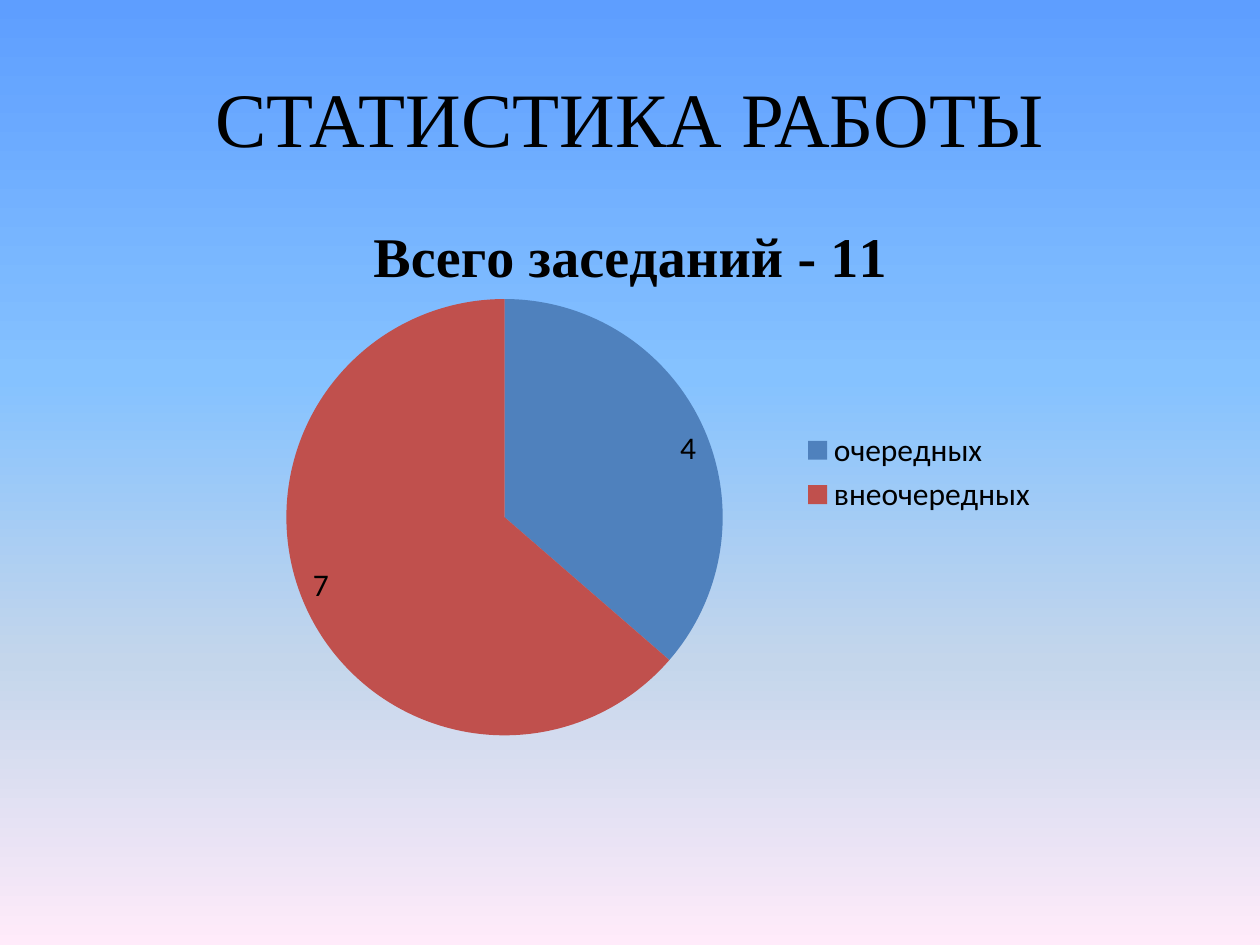
from pptx import Presentation, oxml
from pptx import util as u
from pptx.chart.data import CategoryChartData
from pptx.dml.color import RGBColor
from pptx.enum import chart as c, text as t
from pptx.oxml import ns

SERIF = "Times New Roman"
SANS = "Calibri"
BLACK = "000000"


def color(value):
    """Turn a hex string into a colour."""
    return RGBColor.from_string(value)


def style_font(font, name, size, bold=False):
    """Set typeface, size, weight and black colour."""
    font.name = name
    font.size = u.Pt(size)
    font.bold = bold
    font.color.rgb = color(BLACK)


def set_gradient_background(slide, stops):
    """Fill the background from top to bottom with (percent, hex) stops."""
    fill = slide.background.fill
    fill.gradient()
    fill.gradient_angle = 270
    stop_list = slide.background.element.xpath(".//a:gsLst")[0]
    for stop in list(stop_list):
        stop_list.remove(stop)
    for percent, value in stops:
        stop_list.append(oxml.parse_xml(
            f'<a:gs {ns.nsdecls("a")} pos="{percent * 1000}">'
            f'<a:srgbClr val="{value}"/></a:gs>'))


def add_heading(slide, wording):
    """Add the centred slide heading."""
    shape = slide.shapes.add_textbox(
        u.Inches(0.5), u.Inches(0.3), u.Inches(9), u.Inches(1.25))
    frame = shape.text_frame
    frame.word_wrap = True
    frame.vertical_anchor = t.MSO_ANCHOR.MIDDLE
    paragraph = frame.paragraphs[0]
    paragraph.text = wording
    paragraph.alignment = t.PP_ALIGN.CENTER
    style_font(paragraph.font, SERIF, 44)


def place_plot(chart, **fractions):
    """Fix the inner plot area as fractions of the chart frame."""
    plot_area = chart.element.xpath(".//c:plotArea")[0]
    for layout in plot_area.xpath("./c:layout"):
        plot_area.remove(layout)
    sizes = "".join(f'<c:{key} val="{value}"/>' for key, value in fractions.items())
    plot_area.insert(0, oxml.parse_xml(
        f'<c:layout {ns.nsdecls("c")}><c:manualLayout>'
        '<c:layoutTarget val="inner"/><c:xMode val="edge"/><c:yMode val="edge"/>'
        f'{sizes}</c:manualLayout></c:layout>'))


def add_pie(slide, title, slices):
    """Add a titled pie chart from (name, value, hex) slices."""
    data = CategoryChartData()
    data.categories = [name for name, _, _ in slices]
    data.add_series("Заседания", [value for _, value, _ in slices])
    chart = slide.shapes.add_chart(
        c.XL_CHART_TYPE.PIE, u.Inches(1.67), u.Inches(1.53),
        u.Inches(6.67), u.Inches(4.44), data).chart
    style_font(chart.font, SANS, 18)

    chart.has_title = True
    paragraph = chart.chart_title.text_frame.paragraphs[0]
    paragraph.text = title
    style_font(paragraph.font, SERIF, 32, bold=True)
    style_font(paragraph.runs[0].font, SERIF, 32, bold=True)
    chart.chart_title.include_in_layout = False

    chart.has_legend = True
    chart.legend.position = c.XL_LEGEND_POSITION.RIGHT
    chart.legend.include_in_layout = False

    plot = chart.plots[0]
    plot.vary_by_categories = True
    plot.has_data_labels = True
    labels = plot.data_labels
    labels.show_value = True
    labels.show_percentage = False
    labels.position = c.XL_LABEL_POSITION.INSIDE_END
    style_font(labels.font, SANS, 18)
    for index, (_, _, value) in enumerate(slices):
        fill = plot.series[0].points[index].format.fill
        fill.solid()
        fill.fore_color.rgb = color(value)
    place_plot(chart, x=0.09, y=0.19, w=0.52, h=0.78)


def main():
    """Build and save the slide."""
    presentation = Presentation()
    presentation.slide_width = u.Inches(10)
    presentation.slide_height = u.Inches(7.5)
    slide = presentation.slides.add_slide(presentation.slide_layouts[6])
    set_gradient_background(slide, [
        (0, "5E9EFF"), (40, "85C2FF"), (70, "C4D6EB"), (100, "FFEBFA")])
    add_heading(slide, "СТАТИСТИКА РАБОТЫ")
    add_pie(slide, "Всего заседаний - 11", [
        ("очередных", 4, "4F81BD"), ("внеочередных", 7, "C0504D")])
    presentation.save("out.pptx")


if __name__ == "__main__":
    main()
